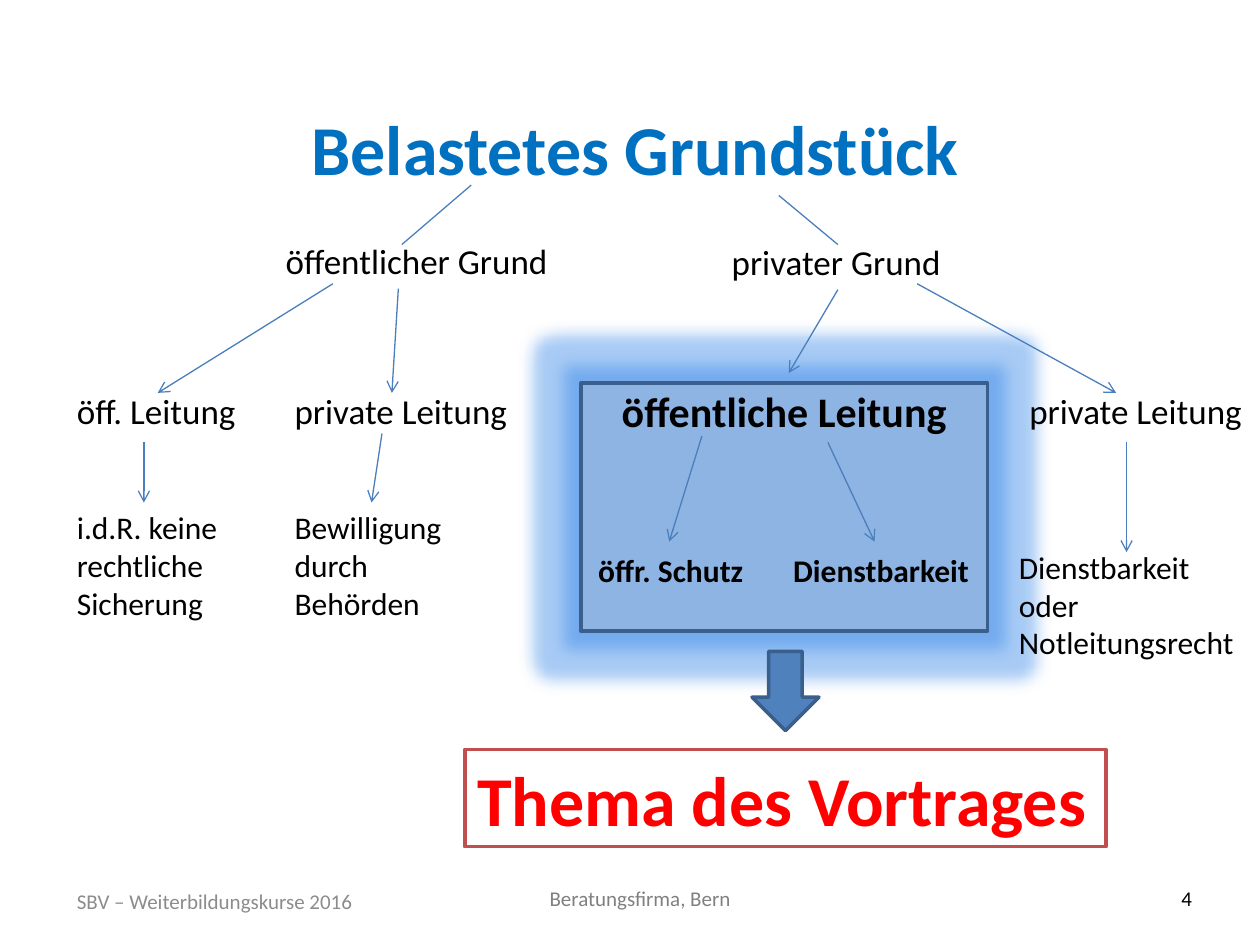
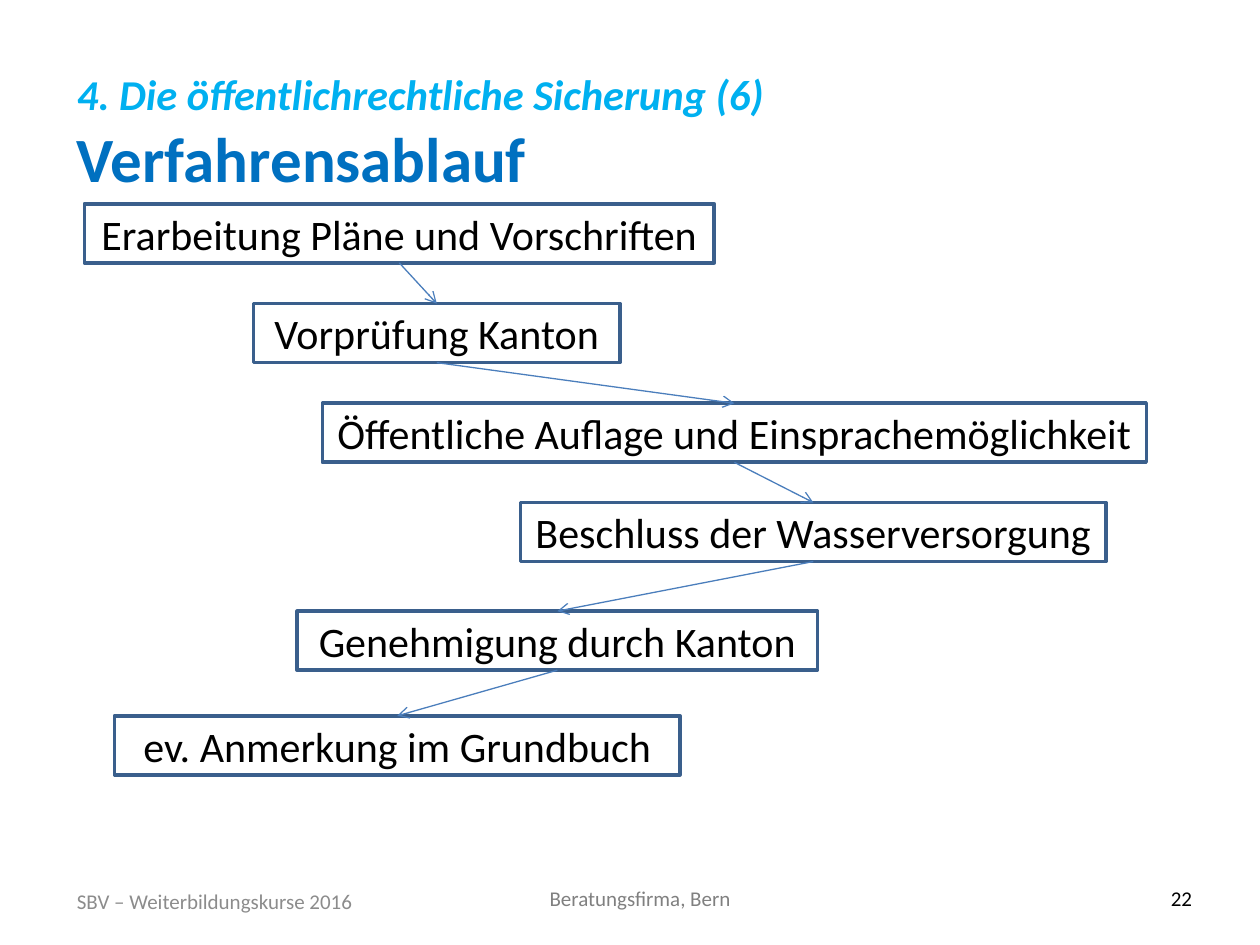
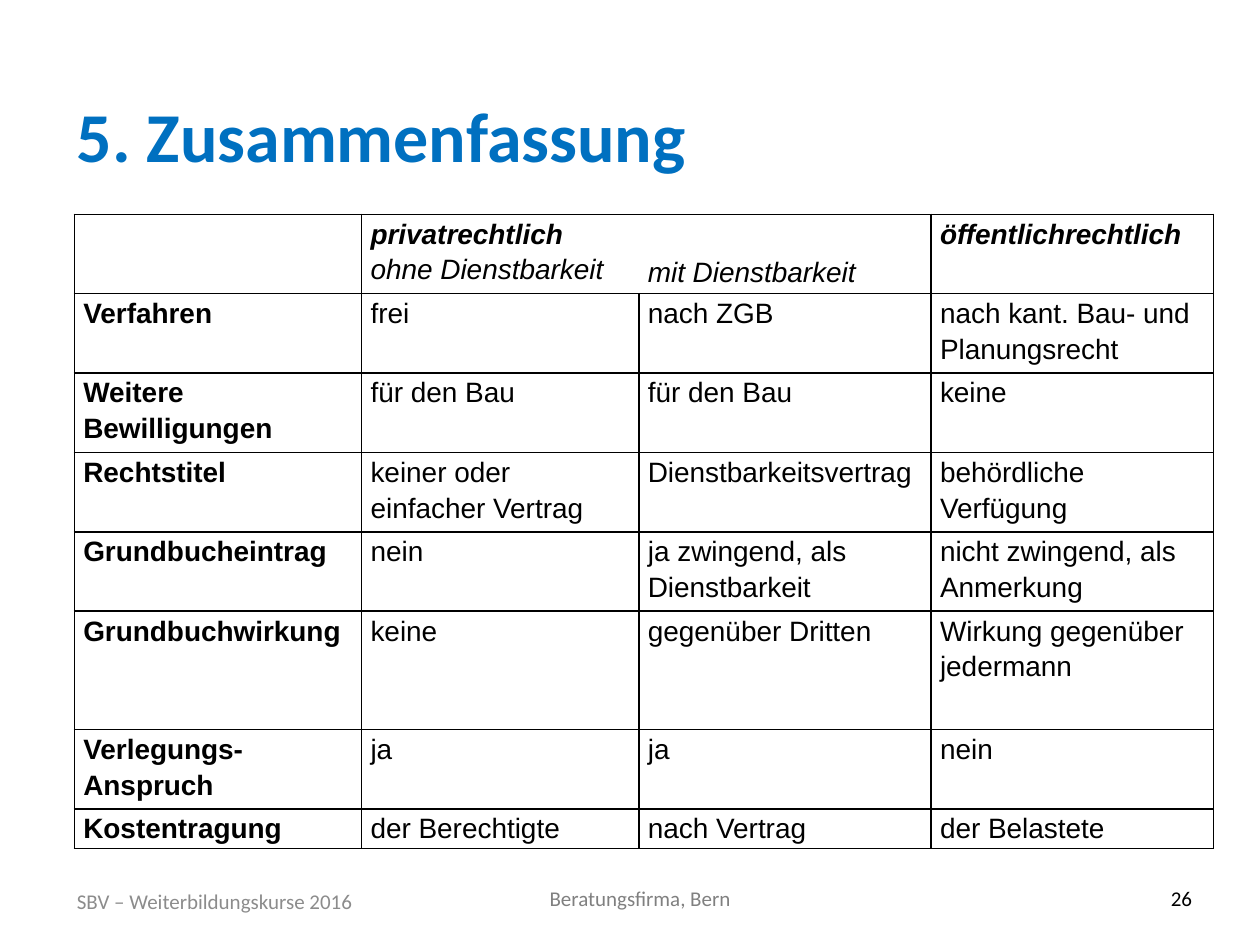
import lxml.etree
import pptx
import pptx.dml.color
import pptx.enum.shapes
import pptx.enum.text
import pptx.oxml.ns
import pptx.util

Cm = pptx.util.Cm
Pt = pptx.util.Pt
qn = pptx.oxml.ns.qn
RGB = pptx.dml.color.RGBColor.from_string
SHAPE = pptx.enum.shapes.MSO_SHAPE
ANCHOR = pptx.enum.text.MSO_ANCHOR
ALIGN = pptx.enum.text.PP_ALIGN

THEME = {
    "colours": {
        "white": "FFFFFF", "black": "000000", "title": "0070C0", "chapter": "00B0F0",
        "course": "8C8C8C", "firm": "808080", "link": "4B7EBC", "edge": "3A5F8C",
        "arrow": "4F81BD", "focus": "8EB4E3", "topic_edge": "C0504D", "topic": "FF0000",
    },
    "fonts": {
        "title": ("title", {"size": Pt(40), "bold": True}),
        "subtitle": ("title", {"size": Pt(36), "bold": True}),
        "chapter": ("chapter", {"size": Pt(24.3), "bold": True, "italic": True}),
        "topic": ("topic", {"size": Pt(40), "bold": True}),
        "course": ("course", {"size": Pt(12)}),
        "firm": ("firm", {"size": Pt(12)}),
        "number": ("black", {"size": Pt(12)}),
        "branch": ("black", {"size": Pt(20)}),
        "leaf": ("black", {"size": Pt(18)}),
        "focus": ("black", {"size": Pt(24), "bold": True}),
        "focus_leaf": ("black", {"size": Pt(18), "bold": True}),
        "step": ("black", {"size": Pt(24)}),
        "cell": ("black", {"size": Pt(16), "name": "Arial"}),
        "cell_head": ("black", {"size": Pt(16), "name": "Arial", "bold": True}),
        "cell_kind": ("black", {"size": Pt(16), "name": "Arial", "bold": True, "italic": True}),
        "cell_variant": ("black", {"size": Pt(16), "name": "Arial", "italic": True}),
    },
}
COLOURS = {name: RGB(value) for name, value in THEME["colours"].items()}


def write(frame, lines, frame_format, para_format):
    for name, value in frame_format.items():
        setattr(frame, name, value)
    for index, (text, style) in enumerate(lines):
        para = frame.add_paragraph() if index else frame.paragraphs[0]
        for name, value in para_format.items():
            setattr(para, name, value)
        span = para.add_run()
        span.text = text
        colour, font_format = THEME["fonts"][style]
        for name, value in ({"name": "Calibri"} | font_format).items():
            setattr(span.font, name, value)
        span.font.color.rgb = COLOURS[colour]


def add_block(page, kind, at, fill, edge):
    block = page.shapes.add_shape(kind, *map(Cm, at))
    block.shadow.inherit = False
    block.fill.solid()
    block.fill.fore_color.rgb = COLOURS[fill]
    block.line.color.rgb = COLOURS[edge]
    block.line.width = Pt(2)
    return block


deck = pptx.Presentation()
deck.slide_width, deck.slide_height = Cm(25.4), Cm(19.05)
middle = {"word_wrap": True, "vertical_anchor": ANCHOR.MIDDLE}
wrapped = {"word_wrap": True}
unwrapped = {"word_wrap": False}
left = {"alignment": ALIGN.LEFT}
centred = {"alignment": ALIGN.CENTER}
right = {"alignment": ALIGN.RIGHT}

headings = [
    ("4", 1.22, 3.51, [("Belastetes Grundstück", "title")], centred),
    ("22", 1.4, 2.51, [("4. Die öffentlichrechtliche Sicherung (6)", "chapter"),
                       ("Verfahrensablauf", "subtitle")], left),
    ("26", 1.32, 2.79, [("5. Zusammenfassung", "title")], left),
]
pages = []
for number, top, height, title, alignment in headings:
    page = deck.slides.add_slide(deck.slide_layouts[6])
    pages.append(page)
    for at, lines, frame_format, para_format in [
        ((1.3, top, 23.01, height), title, middle, alignment),
        ((1.3, 17.65, 9.02, 1.02), [("SBV – Weiterbildungskurse 2016", "course")], middle, left),
        ((9.91, 17.73, 5.99, 0.76), [("Beratungsfirma, Bern", "firm")], wrapped, centred),
        ((23.09, 17.73, 1.19, 0.76), [(number, "number")], wrapped, right),
    ]:
        box = page.shapes.add_textbox(*map(Cm, at))
        write(box.text_frame, lines, frame_format, para_format)
tree_page, process_page, summary_page = pages
links = []

focus = add_block(tree_page, SHAPE.RECTANGLE, (11.71, 7.72, 8.2, 5), "focus", "edge")
glow = lxml.etree.SubElement(focus._element.spPr.find(qn("a:effectLst")), qn("a:glow"), rad="228600")
glow_colour = lxml.etree.SubElement(glow, qn("a:srgbClr"), val=THEME["colours"]["arrow"])
lxml.etree.SubElement(glow_colour, qn("a:satMod"), val="175000")
lxml.etree.SubElement(glow_colour, qn("a:alpha"), val="40000")
write(
    focus.text_frame,
    [("öffentliche Leitung", "focus"), ("öffr. Schutz\tDienstbarkeit", "focus_leaf")],
    {"word_wrap": True, "vertical_anchor": ANCHOR.TOP,
     "margin_top": Cm(0.05), "margin_left": Cm(0.35), "margin_right": Cm(0.35)},
    centred,
)
focus_leaves = focus.text_frame.paragraphs[1]
tabs = lxml.etree.SubElement(focus_leaves._p.get_or_add_pPr(), qn("a:tabLst"))
lxml.etree.SubElement(tabs, qn("a:tab"), pos=str(Cm(3.93)), algn="l")
focus_leaves.alignment = ALIGN.LEFT
focus_leaves.space_before = Pt(66)

add_block(tree_page, SHAPE.DOWN_ARROW, (15.16, 13.13, 1.35, 1.6), "arrow", "edge")
topic = add_block(tree_page, SHAPE.RECTANGLE, (9.37, 15.11, 12.93, 1.96), "white", "topic_edge")
write(topic.text_frame, [("Thema des Vortrages", "topic")], middle, left)

branches = [
    ((5.51, 4.7, 5.87, 1.12), "öffentlicher Grund", []),
    ((14.5, 4.72, 4.78, 1.12), "privater Grund", []),
    ((1.3, 7.72, 3.76, 4.95), "öff. Leitung", ["i.d.R. keine", "rechtliche", "Sicherung"]),
    ((5.69, 7.72, 4.83, 4.95), "private Leitung", ["Bewilligung", "durch", "Behörden"]),
    ((20.5, 7.72, 4.83, 1.12), "private Leitung", []),
    ((20.29, 10.92, 4.88, 2.57), None, ["Dienstbarkeit", "oder", "Notleitungsrecht"]),
]
for at, branch, leaves in branches:
    box = tree_page.shapes.add_textbox(*map(Cm, at))
    lines = [(branch, "branch")] if branch else []
    write(box.text_frame, lines + [(leaf, "leaf") for leaf in leaves], unwrapped, left)
    if branch and leaves:
        box.text_frame.paragraphs[1].space_before = Pt(44)

STRAIGHT = pptx.enum.shapes.MSO_CONNECTOR.STRAIGHT
for ends, has_head in [
    ((15.7, 3.94, 16.89, 4.93), False),
    ((9.5, 3.73, 8.1, 4.93), False),
    ((18.49, 5.72, 22.5, 7.92), True),
    ((6.71, 5.72, 3.18, 7.92), True),
    ((8.03, 5.82, 7.9, 7.92), True),
    ((16.89, 5.84, 15.9, 7.52), True),
    ((2.9, 8.92, 2.9, 10.13), True),
    ((7.7, 8.74, 7.49, 10.13), True),
    ((22.71, 8.92, 22.71, 11.13), True),
    ((16.69, 8.92, 17.63, 10.92), True),
    ((14.15, 8.79, 13.49, 10.92), True),
]:
    links.append((tree_page.shapes.add_connector(STRAIGHT, *map(Cm, ends)), has_head))

steps = []
for x, y, width, text in [
    (1.7, 4.11, 12.7, "Erarbeitung Pläne und Vorschriften"),
    (5.11, 6.12, 7.39, "Vorprüfung Kanton"),
    (6.5, 8.13, 16.61, "Öffentliche Auflage und Einsprachemöglichkeit"),
    (10.49, 10.13, 11.81, "Beschluss der Wasserversorgung"),
    (5.99, 12.32, 10.49, "Genehmigung durch Kanton"),
    (2.31, 14.43, 11.4, "ev. Anmerkung im Grundbuch"),
]:
    step = add_block(process_page, SHAPE.RECTANGLE, (x, y, width, 1.19), "white", "edge")
    write(step.text_frame, [(text, "step")],
          {"word_wrap": False, "vertical_anchor": ANCHOR.MIDDLE}, centred)
    steps.append(step)
for step, following in zip(steps, steps[1:]):
    link = process_page.shapes.add_connector(STRAIGHT, 0, 0, 0, 0)
    link.begin_connect(step, 2)
    link.end_connect(following, 0)
    links.append((link, True))

for link, has_head in links:
    link.line.color.rgb = COLOURS["link"]
    link.line.width = Pt(0.75)
    if has_head:
        lxml.etree.SubElement(link.line._get_or_add_ln(), qn("a:tailEnd"), type="arrow")
    lxml.etree.SubElement(link._element.spPr, qn("a:effectLst"))

summary = [
    ["", "privatrechtlich\nohne Dienstbarkeit", "mit Dienstbarkeit", "öffentlichrechtlich"],
    ["Verfahren", "frei", "nach ZGB", "nach kant. Bau- und Planungsrecht"],
    ["Weitere Bewilligungen", "für den Bau", "für den Bau", "keine"],
    ["Rechtstitel", "keiner oder\neinfacher Vertrag", "Dienstbarkeitsvertrag",
     "behördliche\nVerfügung"],
    ["Grundbucheintrag", "nein", "ja zwingend, als Dienstbarkeit",
     "nicht zwingend, als Anmerkung"],
    ["Grundbuchwirkung", "keine", "gegenüber Dritten", "Wirkung gegenüber jedermann"],
    ["Verlegungs-Anspruch", "ja", "ja", "nein"],
    ["Kostentragung", "der Berechtigte", "nach Vertrag", "der Belastete"],
]
widths = [5.79, 5.59, 5.89, 5.69]
heights = [1.6] * 5 + [2.39, 1.6, 0.79]
table = summary_page.shapes.add_table(
    len(heights), len(widths), Cm(1.5), Cm(4.32), Cm(sum(widths)), Cm(sum(heights))
).table
table.first_row = table.horz_banding = False
for column, width in zip(table.columns, widths):
    column.width = Cm(width)
for row, height in zip(table.rows, heights):
    row.height = Cm(height)
cell_format = {"margin_left": Cm(0.18), "margin_right": Cm(0.18),
               "margin_top": 0, "margin_bottom": 0}
for row, texts in enumerate(summary):
    for column, text in enumerate(texts):
        cell = table.cell(row, column)
        for name, value in cell_format.items():
            setattr(cell, name, value)
        cell.fill.solid()
        cell.fill.fore_color.rgb = COLOURS["white"]
        variant = (row, column) == (0, 2)
        if variant:
            cell.vertical_anchor = ANCHOR.BOTTOM
            cell.margin_bottom = Cm(0.1)
        style = "cell_kind" if row == 0 else "cell" if column else "cell_head"
        lines = [
            (line, "cell_variant" if variant or (row == 0 and index) else style)
            for index, line in enumerate(text.split("\n")) if line
        ]
        write(cell.text_frame, lines, {}, {"line_spacing": 1.15})
        open_side = {(0, 1): "R", (0, 2): "L"}.get((row, column))
        for position, side in enumerate("LRTB"):
            border = lxml.etree.Element(qn("a:ln" + side), w=str(Pt(1)))
            if side == open_side:
                lxml.etree.SubElement(border, qn("a:noFill"))
            else:
                paint = lxml.etree.SubElement(border, qn("a:solidFill"))
                lxml.etree.SubElement(paint, qn("a:srgbClr"), val=THEME["colours"]["black"])
            cell._tc.get_or_add_tcPr().insert(position, border)

deck.save("out.pptx")
